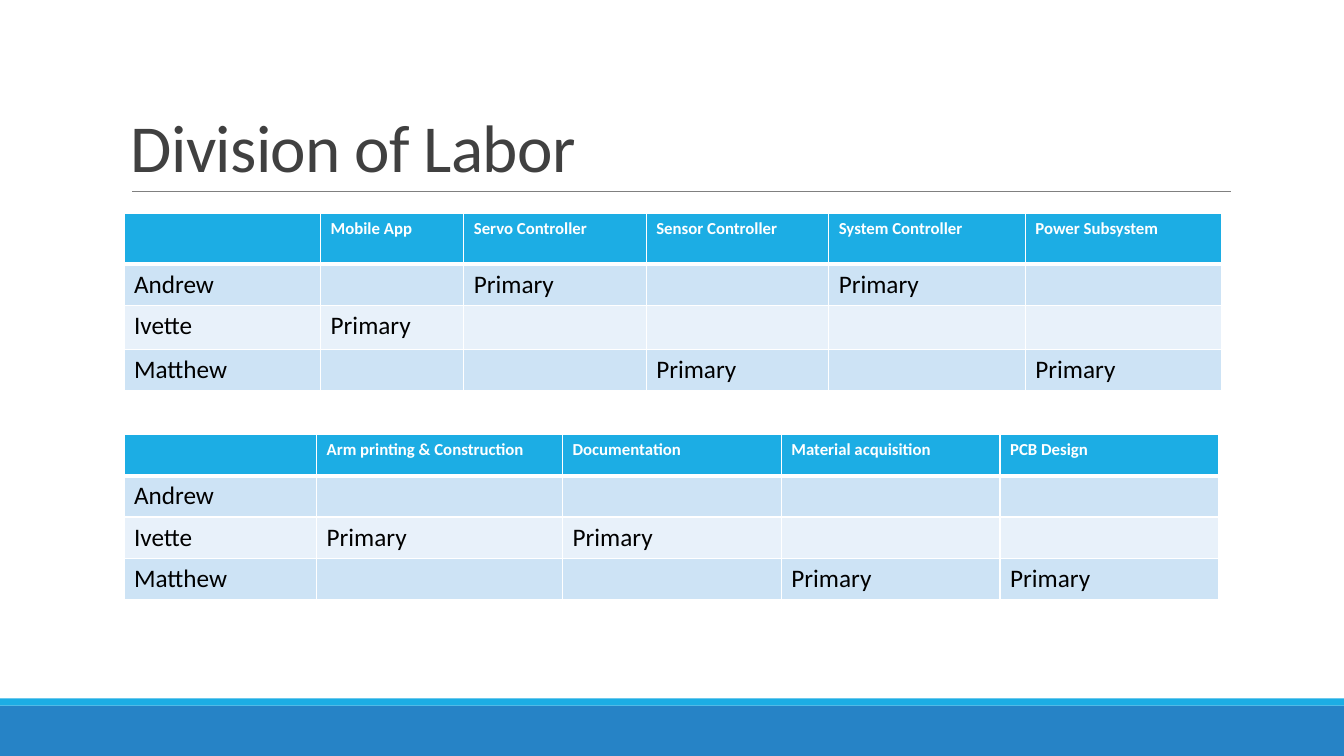
import pptx
import pptx.dml.color
import pptx.enum.shapes
import pptx.enum.text
import pptx.util
from lxml import etree
from pptx.oxml.ns import qn

Inches = pptx.util.Inches
Pt = pptx.util.Pt


def rgb(value):
    return pptx.dml.color.RGBColor.from_string(value)


def write(frame, text, size=18, color="000000", bold=False, spacing=None, line_spacing=None):
    """Put one formatted run into a text frame; spacing is in points."""
    paragraph = frame.paragraphs[0]
    if line_spacing:
        paragraph.line_spacing = line_spacing
    run = paragraph.add_run()
    run.text = text
    run.font.name = "Calibri"
    run.font.size = Pt(size)
    run.font.bold = bold
    run.font.color.rgb = rgb(color)
    if spacing is not None:
        run.font._element.set("spc", str(int(spacing * 100)))


class LaborSlide:
    ACCENT = "1CADE4"
    FOOTER = "2683C6"
    BANDS = ("CDE3F5", "E8F1FA")
    WHITE = "FFFFFF"

    def __init__(self, deck):
        self.slide = deck.slides.add_slide(deck.slide_layouts[6])
        self.shapes = self.slide.shapes

    def band(self, top, height, color):
        bar = self.shapes.add_shape(pptx.enum.shapes.MSO_SHAPE.RECTANGLE,
                                    0, Inches(top), Inches(13.33), Inches(height))
        bar.shadow.inherit = False
        bar.fill.solid()
        bar.fill.fore_color.rgb = rgb(color)
        bar.line.fill.background()

    def rule(self, left, right, y):
        line = self.shapes.add_connector(pptx.enum.shapes.MSO_CONNECTOR.STRAIGHT,
                                         Inches(left), Inches(y), Inches(right), Inches(y))
        line.line.color.rgb = rgb("808080")
        line.line.width = Pt(0.5)
        etree.SubElement(line._element.spPr, qn("a:effectLst"))

    def title(self, text):
        heading = self.shapes.add_textbox(Inches(1.2), Inches(0.31), Inches(11), Inches(1.59))
        frame = heading.text_frame
        frame.word_wrap = True
        frame.vertical_anchor = pptx.enum.text.MSO_ANCHOR.BOTTOM
        write(frame, text, size=48, color="404040", spacing=-0.5, line_spacing=0.85)

    def borders(self, cell, top, bottom):
        """White cell edges, widths in points; must run before the cell is filled."""
        properties = cell._tc.get_or_add_tcPr()
        for side, width in (("L", 1), ("R", 1), ("T", top), ("B", bottom)):
            edge = etree.SubElement(properties, qn(f"a:ln{side}"), w=str(Pt(width)))
            fill = etree.SubElement(edge, qn("a:solidFill"))
            etree.SubElement(fill, qn("a:srgbClr"), val=self.WHITE)

    def duties(self, top, widths, heights, tasks, primary):
        """Table of people against tasks; primary maps a person to the tasks they lead."""
        rows = [["", *tasks]]
        for person, led in primary.items():
            rows.append([person, *("Primary" if task in led else "" for task in tasks)])
        table = self.shapes.add_table(len(rows), len(widths), Inches(1.23), Inches(top),
                                      Inches(sum(widths)), Inches(sum(heights))).table
        for column, width in zip(table.columns, widths):
            column.width = Inches(width)
        for r, (row, height) in enumerate(zip(rows, heights)):
            table.rows[r].height = Inches(height)
            header = r == 0
            for c, text in enumerate(row):
                cell = table.cell(r, c)
                self.borders(cell, top=3 if r == 1 else 1, bottom=3 if header else 1)
                cell.fill.solid()
                cell.fill.fore_color.rgb = rgb(self.ACCENT if header else self.BANDS[(r - 1) % 2])
                if text and header:
                    write(cell.text_frame, text, size=12, color=self.WHITE, bold=True)
                elif text:
                    write(cell.text_frame, text)


def main():
    deck = pptx.Presentation()
    deck.slide_width, deck.slide_height = Inches(13.33), Inches(7.5)
    labor = LaborSlide(deck)
    labor.band(7, 0.5, labor.FOOTER)
    labor.band(6.93, 0.07, labor.ACCENT)
    labor.rule(1.31, 12.21, 1.9)
    labor.title("Division of Labor")
    labor.duties(
        2.12, [1.95, 1.42, 1.81, 1.81, 1.95, 1.95], [0.5, 0.41, 0.44, 0.41],
        ["Mobile App", "Servo Controller", "Sensor Controller", "System Controller",
         "Power Subsystem"],
        {"Andrew": ["Servo Controller", "System Controller"],
         "Ivette": ["Mobile App"],
         "Matthew": ["Sensor Controller", "Power Subsystem"]})
    labor.duties(
        4.31, [1.91, 2.44, 2.17, 2.17, 2.17], [0.41] * 4,
        ["Arm printing & Construction", "Documentation", "Material acquisition", "PCB Design"],
        {"Andrew": [],
         "Ivette": ["Arm printing & Construction", "Documentation"],
         "Matthew": ["Material acquisition", "PCB Design"]})
    deck.save("out.pptx")


if __name__ == "__main__":
    main()
